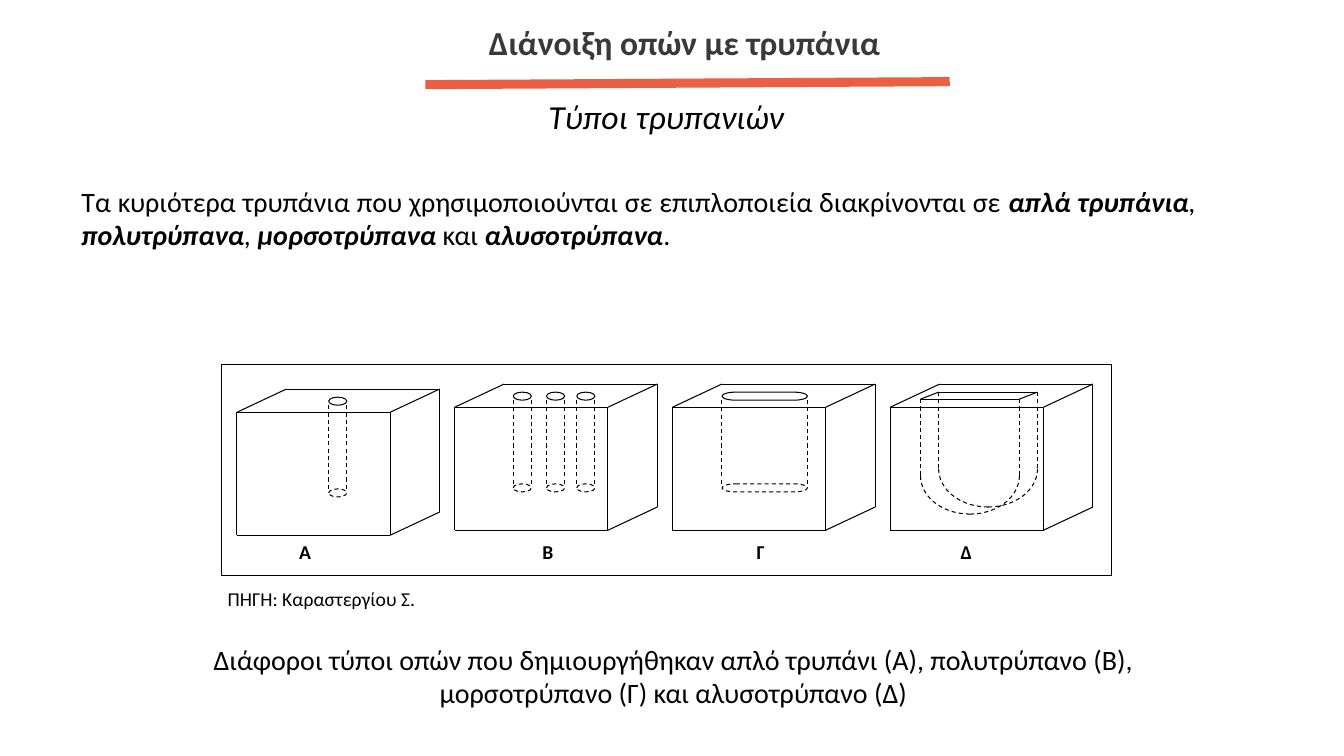
from math import cos, pi, sin

from lxml import etree
from pptx import Presentation
from pptx.dml.color import RGBColor
from pptx.enum.dml import MSO_LINE
from pptx.enum.shapes import MSO_CONNECTOR, MSO_SHAPE
from pptx.enum.text import MSO_AUTO_SIZE, PP_ALIGN
from pptx.oxml.ns import qn
from pptx.util import Inches, Pt

STRAIGHT = MSO_CONNECTOR.STRAIGHT
DASH = MSO_LINE.DASH
RECTANGLE, OVAL, SLOT = MSO_SHAPE.RECTANGLE, MSO_SHAPE.OVAL, MSO_SHAPE.FLOWCHART_TERMINATOR
LEFT, CENTER, JUSTIFY = PP_ALIGN.LEFT, PP_ALIGN.CENTER, PP_ALIGN.JUSTIFY
FIT, FIXED = MSO_AUTO_SIZE.SHAPE_TO_FIT_TEXT, MSO_AUTO_SIZE.NONE

BLACK = RGBColor(0x00, 0x00, 0x00)
WHITE = RGBColor(0xFF, 0xFF, 0xFF)
CHARCOAL = RGBColor(0x3B, 0x38, 0x38)
CORAL = RGBColor(0xEA, 0x60, 0x45)

TITLE = [("Διάνοιξη οπών με τρυπάνια", True, False)]
SUBTITLE = [("Τύποι τρυπανιών", False, True)]
INTRO = [
    ("Τα κυριότερα τρυπάνια που χρησιμοποιούνται σε επιπλοποιεία διακρίνονται σε ", False, False),
    ("απλά τρυπάνια", True, True),
    (", ", False, True),
    ("πολυτρύπανα", True, True),
    (", ", False, True),
    ("μορσοτρύπανα ", True, True),
    ("και ", False, False),
    ("αλυσοτρύπανα", True, True),
    (".", False, False),
]
SOURCE = [("ΠΗΓΗ: Καραστεργίου Σ.", False, False)]
CAPTION = [("Διάφοροι τύποι οπών που δημιουργήθηκαν απλό τρυπάνι (Α), πολυτρύπανο (Β), "
            "μορσοτρύπανο (Γ) και αλυσοτρύπανο (Δ)", False, False)]

BLOCKS = [
    {"label": "Α", "label_shift": 0.3, "drop": 0.05, "kind": OVAL, "width": 0.18, "holes": [0.91]},
    {"label": "Β", "label_shift": 0.55, "drop": 0, "kind": OVAL, "width": 0.18,
     "holes": [0.58, 0.91, 1.21]},
    {"label": "Γ", "label_shift": 0.5, "drop": 0, "kind": SLOT, "width": 0.85, "holes": [0.49]},
    {"label": "Δ", "label_shift": 0.38, "drop": 0, "kind": None, "width": 0.98, "holes": [0.3]},
]
FIRST_LEFT, PITCH, FRONT_TOP = 2.35, 2.16, 4.04
FRONT_WIDTH, FRONT_HEIGHT = 1.52, 1.22
DEPTH_X, DEPTH_Y = 0.49, -0.23
CAP_HEIGHT, CAP_RISE, FLOOR_DROP = 0.08, 0.15, 0.76
SLOT_RISE, SLOT_DEPTH, BEND_HEIGHT = 0.08, 0.76, 0.38
SLOT_SHIFT_X, SLOT_SHIFT_Y = 0.18, -0.07
ARC_STEPS = 24


def add_text(shapes, place, spans, size, align, color=BLACK, wrap=True, fit=FIT, margins=None):
    box = shapes.add_textbox(*map(Inches, place))
    frame = box.text_frame
    frame.word_wrap = wrap
    frame.auto_size = fit
    if margins:
        frame.margin_left = frame.margin_right = Inches(margins[0])
        frame.margin_top = frame.margin_bottom = Inches(margins[1])
    para = frame.paragraphs[0]
    para.alignment = align
    para.font.name = "Calibri"
    para.font.size = Pt(size)
    para.font.color.rgb = color
    for text, bold, italic in spans:
        span = para.add_run()
        span.text = text
        span.font.bold = bold
        span.font.italic = italic
    return para


def style_line(line, dashed=False, color=BLACK, width=0.75):
    line.color.rgb = color
    line.width = Pt(width)
    if dashed:
        line.dash_style = DASH


def add_line(shapes, start, end, **style):
    line = shapes.add_connector(STRAIGHT, *map(Inches, (*start, *end)))
    etree.SubElement(line._element.spPr, qn("a:effectLst"))
    style_line(line.line, **style)


def add_outline(shapes, kind, place, dashed=False, fill=None):
    shape = shapes.add_shape(kind, *map(Inches, place))
    shape.shadow.inherit = False
    if fill is None:
        shape.fill.background()
    else:
        shape.fill.solid()
        shape.fill.fore_color.rgb = fill
    style_line(shape.line, dashed)


def add_block(shapes, left, top):
    right, bottom = left + FRONT_WIDTH, top + FRONT_HEIGHT
    corners = [(left, top), (right, top), (right, bottom), (left, bottom)]
    for start, end in zip(corners, corners[1:] + corners[:1]):
        add_line(shapes, start, end)
    back = [(x + DEPTH_X, y + DEPTH_Y) for x, y in corners[:3]]
    for front_corner, back_corner in zip(corners, back):
        add_line(shapes, front_corner, back_corner)
    for start, end in zip(back, back[1:]):
        add_line(shapes, start, end)


def add_bore(shapes, kind, left, top, width):
    cap, floor = top - CAP_RISE, top + FLOOR_DROP
    add_outline(shapes, kind, (left, cap, width, CAP_HEIGHT), fill=WHITE)
    for side in (left, left + width):
        add_line(shapes, (side, cap + CAP_HEIGHT), (side, floor), dashed=True)
    add_outline(shapes, kind, (left, floor, width, CAP_HEIGHT), dashed=True, fill=WHITE)


def add_bend(shapes, middle, top, reach):
    points = []
    for step in range(ARC_STEPS + 1):
        angle = pi / 2 * step / ARC_STEPS
        points.append((Inches(middle + reach * sin(angle)), Inches(top + BEND_HEIGHT * cos(angle))))
    builder = shapes.build_freeform(*points[0])
    builder.add_line_segments(points[1:], close=False)
    bend = builder.convert_to_shape()
    bend.shadow.inherit = False
    bend.fill.background()
    style_line(bend.line, dashed=True)


def add_mortise(shapes, left, top, width):
    mouth = top - SLOT_RISE
    for x, y in ((left, mouth), (left + SLOT_SHIFT_X, mouth + SLOT_SHIFT_Y)):
        add_line(shapes, (x, y), (x + width, y))
        for side in (x, x + width):
            add_line(shapes, (side, y), (side, y + SLOT_DEPTH), dashed=True)
        for reach in (width / 2, -width / 2):
            add_bend(shapes, x + width / 2, y + SLOT_DEPTH, reach)
    for side in (left, left + width):
        add_line(shapes, (side, mouth), (side + SLOT_SHIFT_X, mouth + SLOT_SHIFT_Y))


def add_diagram(page):
    shapes = page.shapes.add_group_shape().shapes
    add_outline(shapes, RECTANGLE, (2.2, 3.62, 8.82, 2.09))
    for column, block in enumerate(BLOCKS):
        left, top = FIRST_LEFT + column * PITCH, FRONT_TOP + block["drop"]
        add_block(shapes, left, top)
        for offset in block["holes"]:
            if block["kind"] is None:
                add_mortise(shapes, left + offset, top, block["width"])
            else:
                add_bore(shapes, block["kind"], left + offset, top, block["width"])
        label = add_text(shapes, (left + block["label_shift"], 5.31, 0.75, 0.38),
                         [(block["label"], True, False)], 14, CENTER, fit=FIXED)
        label.space_after = Pt(10)


def main():
    deck = Presentation()
    deck.slide_width, deck.slide_height = Inches(13.33), Inches(7.5)
    page = deck.slides.add_slide(deck.slide_layouts[6])
    shapes = page.shapes
    add_text(shapes, (4.12, 0.19, 5.34, 0.45), TITLE, 24, CENTER, CHARCOAL, margins=(0.05, 0.03))
    add_line(shapes, (4.22, 0.84), (9.42, 0.81), color=CORAL, width=6.5)
    subtitle = add_text(shapes, (5.22, 0.9, 2.69, 0.5), SUBTITLE, 24, JUSTIFY, wrap=False)
    subtitle._p.get_or_add_pPr().set("indent", str(Inches(0.12)))
    add_text(shapes, (0.71, 1.78, 11.25, 0.77), INTRO, 20, JUSTIFY)
    add_diagram(page)
    add_text(shapes, (2.16, 5.77, 2.08, 0.34), SOURCE, 14, LEFT, wrap=False)
    add_text(shapes, (1.98, 6.32, 9.4, 0.77), CAPTION, 20, CENTER)
    deck.save("out.pptx")


if __name__ == "__main__":
    main()
